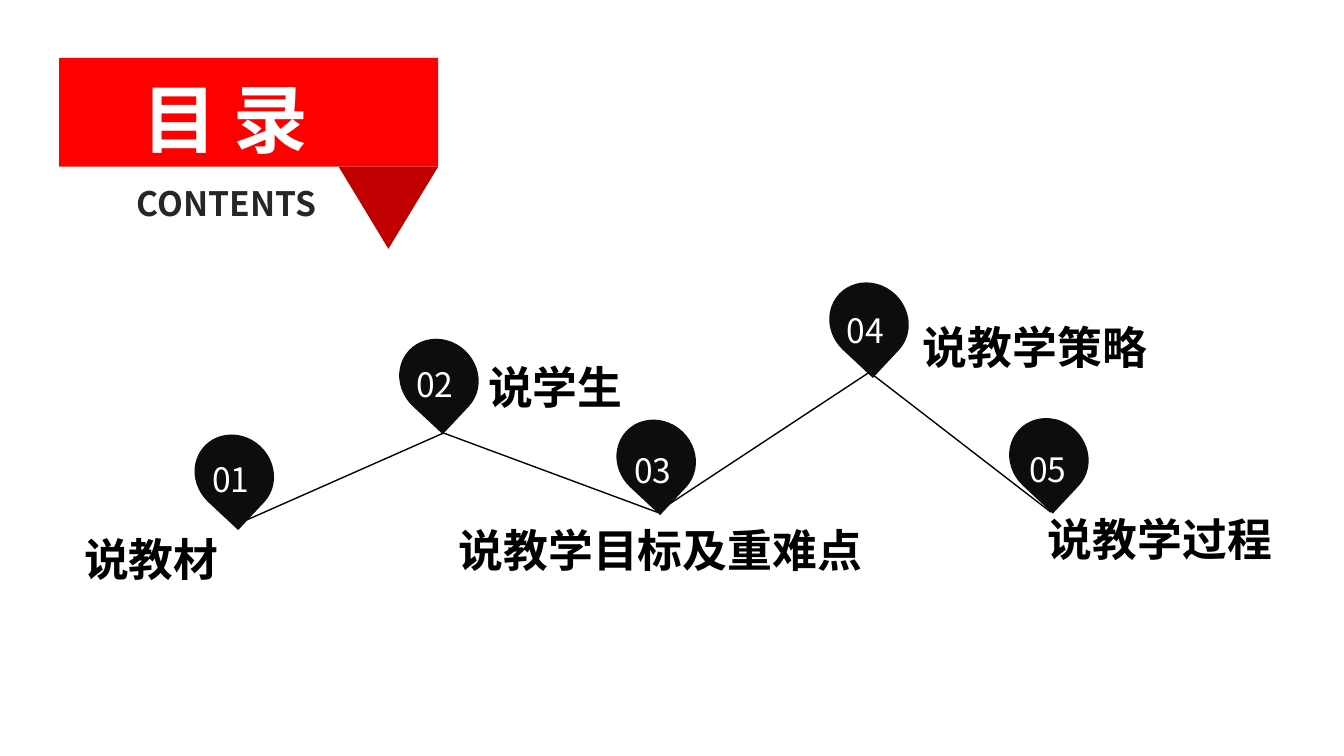
from typing import NamedTuple

from pptx import Presentation
from pptx.dml.color import RGBColor as RGB
from pptx.enum.shapes import MSO_CONNECTOR as Line, MSO_SHAPE as Kind
from pptx.enum.text import MSO_ANCHOR as Anchor, MSO_AUTO_SIZE as Fit, PP_ALIGN as Align
from pptx.oxml.ns import qn
from pptx.util import Pt

FONT = "Noto Sans CJK SC"
COLORS = {"red": "FF0000", "dark": "C00000", "pin": "0D0D0D",
          "white": "FFFFFF", "gray": "262626", "black": "000000"}


class Box(NamedTuple):
    x: float
    y: float
    w: float
    h: float


class Stop(NamedTuple):
    label: str
    pin: tuple[float, float]
    num: tuple[float, float]
    node: tuple[float, float]
    box: Box
    gap: float | None = None


STOPS = [
    Stop("说教材", (105, 232), (106.6, 242.6), (129, 280), Box(37.5, 281.5, 87, 36)),
    Stop("说学生", (214.6, 180.7), (216, 191.5), (237.6, 232), Box(254, 189.4, 87, 36)),
    Stop("说教学目标及重难点", (331, 224), (332.6, 237.6), (352, 274.4),
         Box(238.7, 292.3, 231, 20.2), 13),
    Stop("说教学策略", (445, 150.5), (446.4, 162.7), (465.8, 199.4),
         Box(486.7, 167.8, 135.4, 36)),
    Stop("说教学过程", (541.4, 223.2), (544.3, 236.9), (563, 274.4),
         Box(553.7, 270.7, 135.4, 36)),
]


def place(box: Box) -> list[Pt]:
    return [Pt(v) for v in box]


def write(frame, text: str, size: float, color: str, bold: bool = True,
          align=Align.LEFT) -> None:
    frame.text = text
    frame.vertical_anchor = Anchor.TOP
    para = frame.paragraphs[0]
    para.alignment = align
    font = para.runs[0].font
    font.size, font.bold, font.name = Pt(size), bold, FONT
    font.color.rgb = RGB.from_string(COLORS[color])
    east = font._element.makeelement(qn("a:ea"), {"typeface": FONT})
    font._element.find(qn("a:latin")).addnext(east)


def add_text(box: Box, text: str, size: float, color: str, bold: bool = True,
             align=Align.LEFT, gap: float | None = None) -> None:
    frame = slide.shapes.add_textbox(*place(box)).text_frame
    write(frame, text, size, color, bold, align)
    frame.word_wrap = False
    frame.auto_size = Fit.SHAPE_TO_FIT_TEXT
    if gap:
        frame.paragraphs[0].line_spacing = Pt(gap)


def add_shape(kind: Kind, box: Box, color: str, turn: float = 0) -> None:
    shape = slide.shapes.add_shape(kind, *place(box))
    shape.rotation = turn
    shape.shadow.inherit = False
    shape.fill.solid()
    shape.fill.fore_color.rgb = RGB.from_string(COLORS[color])
    shape.line.fill.background()


def add_line(start: tuple[float, float], end: tuple[float, float]) -> None:
    line = slide.shapes.add_connector(Line.STRAIGHT, *place((*start, *end)))
    line.line.width = Pt(0.75)
    line.line.color.rgb = RGB.from_string(COLORS["black"])
    props = line._element.spPr
    props.append(props.makeelement(qn("a:effectLst"), {}))


deck = Presentation()
deck.slide_width, deck.slide_height = Pt(720), Pt(405)
slide = deck.slides.add_slide(deck.slide_layouts[5])

# Heading banner
add_shape(Kind.RECTANGLE, Box(31.7, 31, 203, 58.3), "red")
add_shape(Kind.ISOSCELES_TRIANGLE, Box(181.4, 89.3, 53.3, 44), "dark", 180)
title = slide.shapes.title
title.left, title.top, title.width, title.height = place(Box(69, 35.3, 320, 55.4))
write(title.text_frame, "目 录", 40, "white")
title.text_frame.word_wrap = True
title.text_frame.auto_size = Fit.SHAPE_TO_FIT_TEXT
slide.shapes._spTree.append(title._element)  # in front of the banner
add_text(Box(66.2, 94.3, 116.6, 28.8), "CONTENTS", 18, "gray")

# Route between the stops
for here, after in zip(STOPS, STOPS[1:]):
    add_line(here.node, after.node)

# Numbered pins and their labels
for n, stop in enumerate(STOPS, 1):
    add_shape(Kind.TEAR, Box(*stop.pin, 41, 44), "pin", 133.1)
    add_text(Box(*stop.num, 36, 28.8), f"{n:02}", 18, "white", bold=False)
    align = Align.LEFT if stop.gap else Align.CENTER
    add_text(stop.box, stop.label, 24, "black", align=align, gap=stop.gap)

deck.save("out.pptx")
